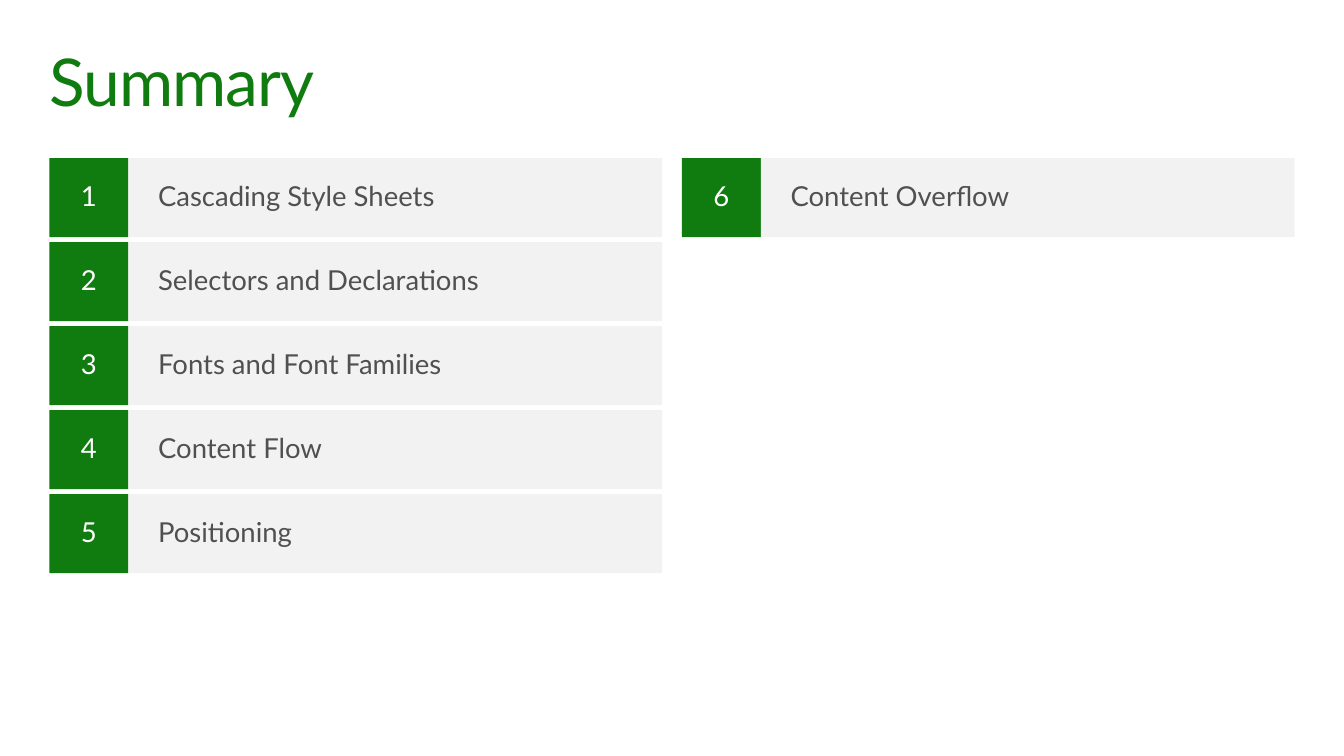
"""Build the Summary slide: a title above numbered topics in two columns."""
from dataclasses import dataclass

from pptx import Presentation
from pptx.dml.color import RGBColor
from pptx.enum.shapes import MSO_SHAPE
from pptx.enum.text import MSO_ANCHOR, PP_ALIGN
from pptx.util import Pt

TITLE = "Summary"
TOPICS = [
    "Cascading Style Sheets",
    "Selectors and Declarations",
    "Fonts and Font Families",
    "Content Flow",
    "Positioning",
    "Content Overflow",
]


@dataclass(frozen=True)
class Theme:
    """Colours, font and type sizes."""
    green: RGBColor = RGBColor(0x10, 0x7C, 0x10)
    band: RGBColor = RGBColor(0xF2, 0xF2, 0xF2)
    ink: RGBColor = RGBColor(0x50, 0x50, 0x50)
    white: RGBColor = RGBColor(0xFF, 0xFF, 0xFF)
    font: str = "Lato"
    title_size: float = 48
    topic_size: float = 20
    title_spacing: str = "-70"


THEME = Theme()
SLIDE_WIDTH, SLIDE_HEIGHT = 979.2, 550.8
TITLE_BOX = (28.8, 28.8, 921.6, 72)
LEFT, TOP = 36, 115.2
ROWS = 5
TILE, BAND_WIDTH = 57.6, 388.8
ROW_GAP, COLUMN_GAP = 3.6, 14.4


def write(shape, text, size, color, inset, align, anchor):
    """Put one styled line of text in a shape and return its paragraph."""
    frame = shape.text_frame
    frame.word_wrap = True
    frame.vertical_anchor = anchor
    frame.margin_left = frame.margin_right = Pt(inset[0])
    frame.margin_top = frame.margin_bottom = Pt(inset[1])
    line = frame.paragraphs[0]
    line.text = text
    line.alignment = align
    line.line_spacing = 0.9
    line.font.name = THEME.font
    line.font.size = Pt(size)
    line.font.color.rgb = color
    return line


def add_title(slide):
    """Add the tightly spaced title."""
    heading = slide.shapes.add_textbox(*map(Pt, TITLE_BOX))
    line = write(heading, TITLE, THEME.title_size, THEME.green, (7.2, 7.2),
                 PP_ALIGN.LEFT, MSO_ANCHOR.TOP)
    line.runs[0].font._element.set("spc", THEME.title_spacing)


def add_cell(group, x, y, width, fill, text, color, inset, align):
    """Add one filled rectangle with its text to a topic group."""
    cell = group.shapes.add_shape(MSO_SHAPE.RECTANGLE, Pt(x), Pt(y), Pt(width), Pt(TILE))
    cell.shadow.inherit = False
    cell.fill.solid()
    cell.fill.fore_color.rgb = fill
    cell.line.fill.background()
    write(cell, text, THEME.topic_size, color, inset, align, MSO_ANCHOR.MIDDLE)


def add_topic(slide, index, topic):
    """Add a numbered topic, filling each column from the top."""
    column, row = divmod(index, ROWS)
    x = LEFT + column * (TILE + BAND_WIDTH + COLUMN_GAP)
    y = TOP + row * (TILE + ROW_GAP)
    group = slide.shapes.add_group_shape()
    add_cell(group, x, y, TILE, THEME.green, str(index + 1), THEME.white,
             (14.4, 11.52), PP_ALIGN.CENTER)
    add_cell(group, x + TILE, y, BAND_WIDTH, THEME.band, topic, THEME.ink,
             (21.6, 7.2), PP_ALIGN.LEFT)


def main():
    """Build and save the slide."""
    deck = Presentation()
    deck.slide_width, deck.slide_height = Pt(SLIDE_WIDTH), Pt(SLIDE_HEIGHT)
    slide = deck.slides.add_slide(deck.slide_layouts[6])
    add_title(slide)
    for index, topic in enumerate(TOPICS):
        add_topic(slide, index, topic)
    deck.save("out.pptx")


if __name__ == "__main__":
    main()
